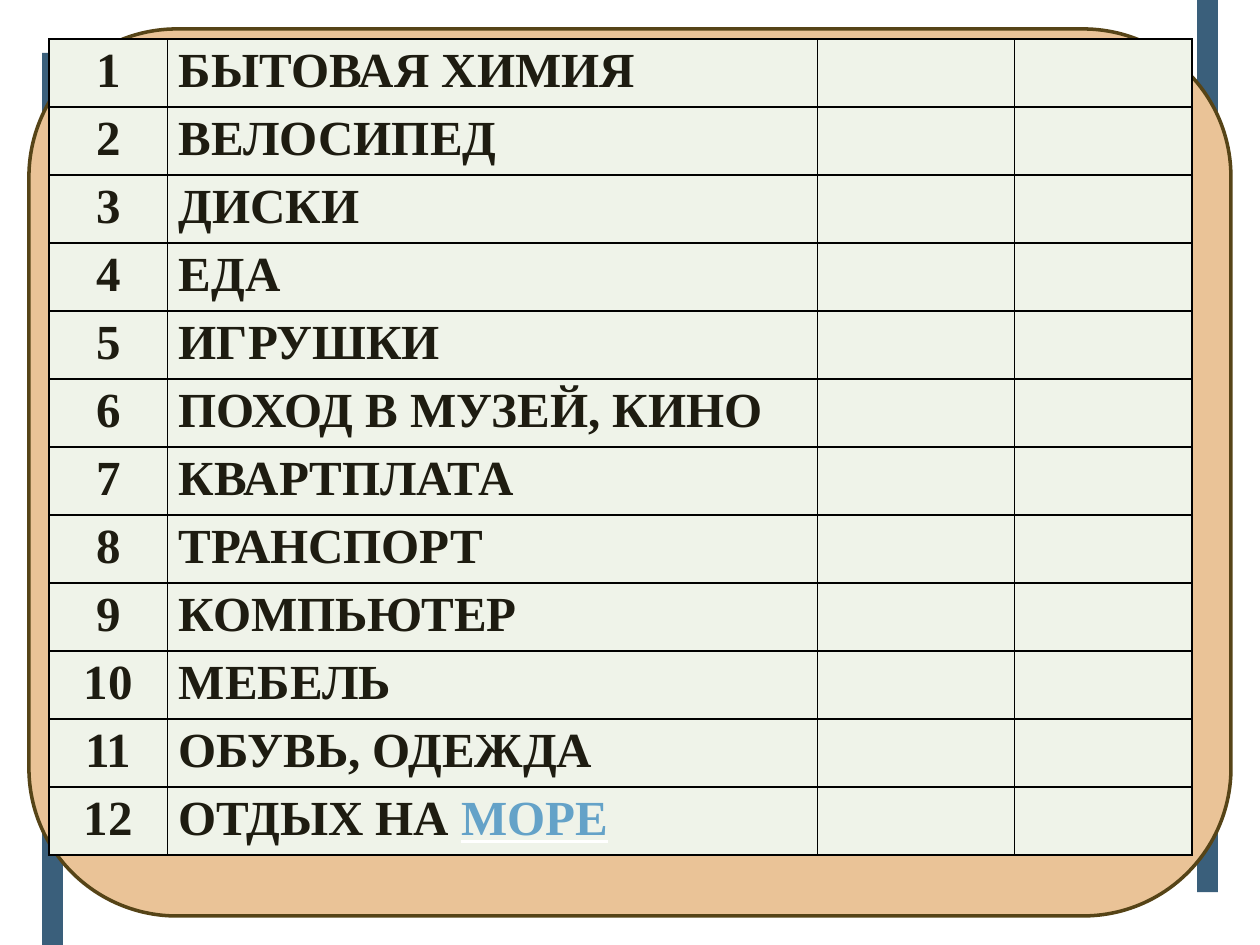
from lxml import etree
from pptx import Presentation
from pptx import util as u
from pptx.dml.color import RGBColor
from pptx.enum import shapes, text
from pptx.oxml.ns import qn

C = {"bar": "3A5F7B", "panel": "EAC397", "edge": "564417", "cell": "EFF3E9",
     "ink": "1E1C11", "link": "64A2C8", "border": "000000", "underline": "FFFFFF"}
FONT = "Times New Roman"
W, H = 10, 7.5
ITEMS = ["БЫТОВАЯ ХИМИЯ", "ВЕЛОСИПЕД", "ДИСКИ", "ЕДА", "ИГРУШКИ",
         "ПОХОД В МУЗЕЙ, КИНО", "КВАРТПЛАТА", "ТРАНСПОРТ", "КОМПЬЮТЕР",
         "МЕБЕЛЬ", "ОБУВЬ, ОДЕЖДА", "ОТДЫХ НА "]
LINKED = "МОРЕ"
COLS = [0.94, 5.16, 1.56, 1.41]
ROW_H = 0.54


def rgb(name):
    return RGBColor.from_string(C[name])


def add_fill(parent, tag, color):
    """Append a child element holding a solid fill."""
    el = etree.SubElement(parent, qn(tag))
    fill = etree.SubElement(el, qn("a:solidFill"))
    etree.SubElement(fill, qn("a:srgbClr"), val=C[color])
    return el


def add_block(s, kind, box, fill, line=None):
    sp = s.shapes.add_shape(kind, *map(u.Inches, box))
    sp.shadow.inherit = False
    sp.fill.solid()
    sp.fill.fore_color.rgb = rgb(fill)
    if line:
        sp.line.color.rgb = rgb(line)
        sp.line.width = u.Pt(2)
    else:
        sp.line.fill.background()
    return sp


def add_run(p, words, color="ink"):
    r = p.add_run()
    r.text = words
    r.font.size, r.font.bold, r.font.name = u.Pt(28), True, FONT
    r.font.color.rgb = rgb(color)
    return r


def backdrop(s, x, y, w, h):
    # Side bars: left one hangs low, right one hangs high
    bar_w, drop = w / 60, h * 0.056
    for left, top in ((x + w / 30, y + drop), (x + w * 0.95, y)):
        add_block(s, shapes.MSO_SHAPE.RECTANGLE, (left, top, bar_w, h - drop), "bar")
    # Rounded panel
    inset = 0.23
    add_block(s, shapes.MSO_SHAPE.ROUNDED_RECTANGLE,
              (x + inset, y + inset, w - 2 * inset, h - 2 * inset), "panel", "edge")


def style_cell(cell):
    cell.fill.solid()
    cell.fill.fore_color.rgb = rgb("cell")
    cell.margin_left = cell.margin_right = u.Inches(0.09)
    cell.margin_top = cell.margin_bottom = u.Inches(0.04)
    pr = cell._tc.get_or_add_tcPr()
    for i, side in enumerate(("a:lnL", "a:lnR", "a:lnT", "a:lnB")):
        ln = add_fill(pr, side, "border")
        ln.set("w", str(u.Pt(0.96)))
        pr.insert(i, ln)


def expense_table(s, x, y):
    frame = s.shapes.add_table(len(ITEMS), len(COLS), u.Inches(x), u.Inches(y),
                               u.Inches(sum(COLS)), u.Inches(ROW_H * len(ITEMS)))
    tbl = frame.table
    tbl.first_row = tbl.horz_banding = False
    for col, width in zip(tbl.columns, COLS):
        col.width = u.Inches(width)
    for row in tbl.rows:
        row.height = u.Inches(ROW_H)
        for cell in row.cells:
            style_cell(cell)
    for i, item in enumerate(ITEMS):
        p = tbl.cell(i, 0).text_frame.paragraphs[0]
        p.alignment = text.PP_ALIGN.CENTER
        add_run(p, str(i + 1))
        p = tbl.cell(i, 1).text_frame.paragraphs[0]
        add_run(p, item)
    # Last word of the list is underlined in white
    r = add_run(p, LINKED, "link")
    r.font.underline = True
    pr = r.font._element
    pr.find(qn("a:solidFill")).addnext(add_fill(pr, "a:uFill", "underline"))


def main():
    prs = Presentation()
    prs.slide_width, prs.slide_height = u.Inches(W), u.Inches(H)
    s = prs.slides.add_slide(prs.slide_layouts[6])
    backdrop(s, 0, 0, W, H)
    expense_table(s, 0.39, 0.31)
    prs.save("out.pptx")


if __name__ == "__main__":
    main()
